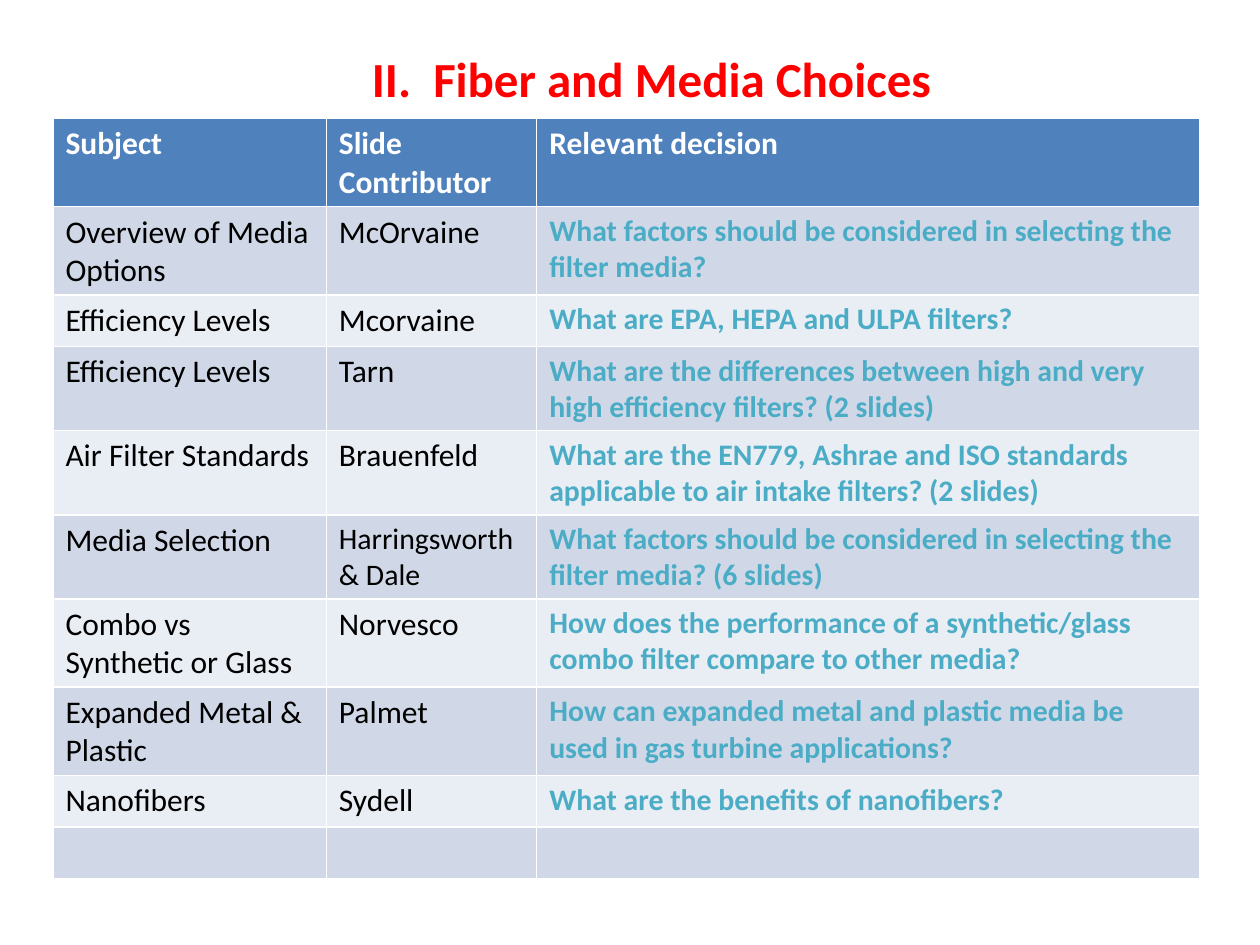
import pptx
import pptx.dml.color
import pptx.enum.text
import pptx.util

Inches = pptx.util.Inches

TITLE = "II.  Fiber and Media Choices"
HEADER = ("Subject", "Slide Contributor", "Relevant decision")
ROWS = [
    ("Overview of Media Options", "McOrvaine",
     "What factors should be considered in selecting the filter media?"),
    ("Efficiency Levels", "Mcorvaine", "What are EPA, HEPA and ULPA filters?"),
    ("Efficiency Levels", "Tarn",
     "What are the differences between high and very high efficiency filters? (2 slides)"),
    ("Air Filter Standards", "Brauenfeld",
     "What are the EN779, Ashrae and ISO standards applicable to air intake filters? (2 slides)"),
    ("Media Selection", "Harringsworth & Dale",
     "What factors should be considered in selecting the filter media? (6 slides)"),
    ("Combo vs Synthetic or Glass", "Norvesco",
     "How does the performance of a synthetic/glass combo filter compare to other media?"),
    ("Expanded Metal & Plastic", "Palmet",
     "How can expanded metal and plastic media be used in gas turbine applications?"),
    ("Nanofibers", "Sydell", "What are the benefits of nanofibers?"),
    ("", "", ""),
]
COLUMN_WIDTHS = (2.17, 1.67, 5.26)
ROW_HEIGHT = 0.41
HEADER_FILL = "4F81BD"
BAND_FILLS = ("D0D8E8", "E9EDF4")

TITLE_FORMAT = {"size": 28, "color": "FF0000", "bold": True}
HEADER_FORMAT = {"size": 18, "color": "FFFFFF", "bold": True}
BODY_FORMAT = {"size": 18, "color": "000000", "bold": False}
LONG_NAME_FORMAT = {**BODY_FORMAT, "size": 17}
DECISION_FORMAT = {"size": 17, "color": "4BACC6", "bold": True}
LONG_NAME_LENGTH = 15


def rgb(value):
    return pptx.dml.color.RGBColor.from_string(value)


def write(text_frame, text, text_format):
    paragraph = text_frame.paragraphs[0]
    if not text:
        paragraph.font.size = pptx.util.Pt(text_format["size"])
        return
    run = paragraph.add_run()
    run.text = text
    values = {"name": "Calibri", "size": pptx.util.Pt(text_format["size"]),
              "bold": text_format["bold"]}
    for name, value in values.items():
        setattr(run.font, name, value)
    run.font.color.rgb = rgb(text_format["color"])


def cell_format(row, column, text):
    if row == 0:
        return HEADER_FORMAT
    if column == 2 and text:
        return DECISION_FORMAT
    if column == 1 and len(text) > LONG_NAME_LENGTH:
        return LONG_NAME_FORMAT
    return BODY_FORMAT


def add_title(slide):
    box = slide.shapes.add_textbox(Inches(0.67), Inches(-0.01), Inches(9), Inches(1.25))
    frame = box.text_frame
    frame.word_wrap = True
    frame.vertical_anchor = pptx.enum.text.MSO_ANCHOR.MIDDLE
    frame.paragraphs[0].alignment = pptx.enum.text.PP_ALIGN.CENTER
    write(frame, TITLE, TITLE_FORMAT)


def add_subject_table(slide):
    content = [HEADER, *ROWS]
    table = slide.shapes.add_table(
        len(content), len(HEADER), Inches(0.42), Inches(0.94),
        Inches(sum(COLUMN_WIDTHS)), Inches(ROW_HEIGHT * len(content))).table
    for column, width in zip(table.columns, COLUMN_WIDTHS):
        column.width = Inches(width)
    for row, texts in enumerate(content):
        fill = BAND_FILLS[(row - 1) % 2] if row else HEADER_FILL
        for column, text in enumerate(texts):
            cell = table.cell(row, column)
            cell.fill.solid()
            cell.fill.fore_color.rgb = rgb(fill)
            write(cell.text_frame, text, cell_format(row, column, text))


def main():
    presentation = pptx.Presentation()
    presentation.slide_width = Inches(10)
    presentation.slide_height = Inches(7.5)
    slide = presentation.slides.add_slide(presentation.slide_layouts[6])
    add_title(slide)
    add_subject_table(slide)
    presentation.save("out.pptx")


if __name__ == "__main__":
    main()
